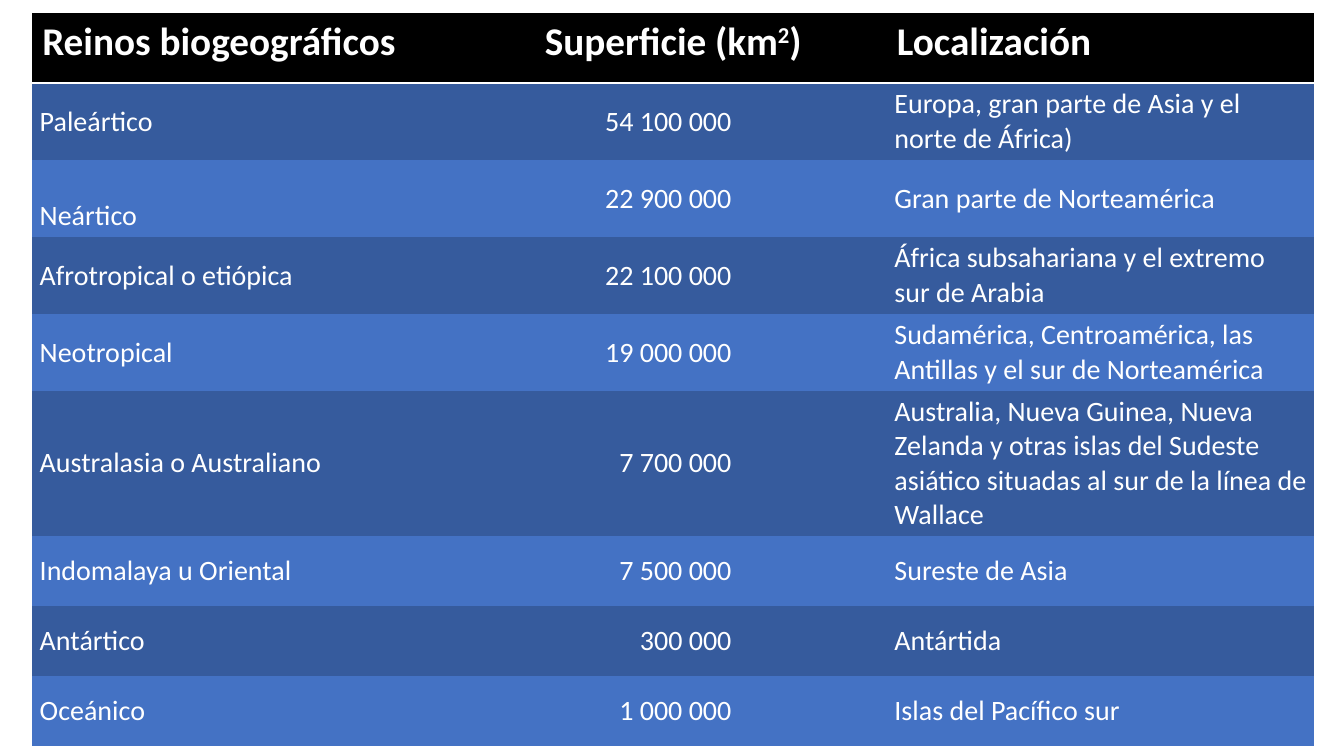
from lxml.etree import SubElement
from pptx import Presentation
from pptx.dml.color import RGBColor
from pptx.enum.text import MSO_ANCHOR as Anchor, PP_ALIGN as Align
from pptx.oxml.ns import qn
from pptx.util import Pt

COLORS = {"white": "FFFFFF", "header": "000000", "dark": "365B9D", "light": "4472C4"}
FONT = "Calibri"
NO_STYLE = "{2D5ABB26-0587-4C30-8999-92F81FD0307C}"
ROW_HEIGHTS = [50, 55, 55, 55, 55, 103, 50, 50, 50]
NUMBER_MARGIN = 111
REALMS = [
    ("Paleártico", "54 100 000", "Europa, gran parte de Asia y el norte de África)"),
    ("Neártico", "22 900 000", "Gran parte de Norteamérica"),
    ("Afrotropical o etiópica", "22 100 000", "África subsahariana y el extremo sur de Arabia"),
    ("Neotropical", "19 000 000", "Sudamérica, Centroamérica, las Antillas y el sur de Norteamérica"),
    ("Australasia o Australiano", "7 700 000",
     "Australia, Nueva Guinea, Nueva Zelanda y otras islas del Sudeste asiático "
     "situadas al sur de la línea de Wallace"),
    ("Indomalaya u Oriental", "7 500 000", "Sureste de Asia"),
    ("Antártico", "300 000", "Antártida"),
    ("Oceánico", "1 000 000", "Islas del Pacífico sur"),
]


def color(name):
    return RGBColor.from_string(COLORS[name])


def fill_cell(cell, fill, size, bold, spans):
    cell.fill.solid()
    cell.fill.fore_color.rgb = color(fill)
    para = cell.text_frame.paragraphs[0]
    para.font.name = FONT
    para.font.size = Pt(size)
    para.font.bold = bold
    para.font.color.rgb = color("white")
    for text in spans:
        span = para.add_run()
        span.text = text
        span.font.name = FONT
        span.font.size = Pt(size)
        span.font.bold = bold
        span.font.color.rgb = color("white")
    return para


def underline_cell(cell):
    line = SubElement(cell._tc.get_or_add_tcPr(), qn("a:lnB"), w=str(Pt(2)))
    solid = SubElement(line, qn("a:solidFill"))
    SubElement(solid, qn("a:srgbClr"), val=COLORS["white"])
    cell._tc.tcPr.insert(0, line)


def add_header(table):
    headings = [["Reinos biogeográficos"], ["Superficie (km", "2", ")"], ["Localización"]]
    for column, spans in enumerate(headings):
        cell = table.cell(0, column)
        para = fill_cell(cell, "header", 28, True, spans)
        underline_cell(cell)
        if column == 1:
            para.alignment = Align.CENTER
            para.runs[1].font._element.set("baseline", "30000")


def add_realms(table):
    for row, realm in enumerate(REALMS, 1):
        for column, text in enumerate(realm):
            cell = table.cell(row, column)
            para = fill_cell(cell, "dark" if row % 2 else "light", 20, False, [text])
            cell.margin_left = cell.margin_right = Pt(5.4)
            cell.margin_top = cell.margin_bottom = Pt(2.7)
            cell.vertical_anchor = Anchor.MIDDLE
            if column == 1:
                para.alignment = Align.RIGHT
                cell.margin_right = Pt(NUMBER_MARGIN)
    table.cell(2, 0).vertical_anchor = Anchor.BOTTOM


def add_realm_table(page, left, top, width):
    frame = page.shapes.add_table(len(ROW_HEIGHTS), 3, Pt(left), Pt(top),
                                  Pt(width), Pt(sum(ROW_HEIGHTS)))
    table = frame.table
    table.horz_banding = False
    table._tbl.tblPr.find(qn("a:tableStyleId")).text = NO_STYLE
    for column in table.columns:
        column.width = Pt(width / 3)
    for row, height in zip(table.rows, ROW_HEIGHTS):
        row.height = Pt(height)
    add_header(table)
    add_realms(table)


def main():
    deck = Presentation()
    deck.slide_width, deck.slide_height = Pt(960), Pt(540)
    page = deck.slides.add_slide(deck.slide_layouts[6])
    add_realm_table(page, 23, 9.3, 915.8)
    deck.save("out.pptx")


if __name__ == "__main__":
    main()
